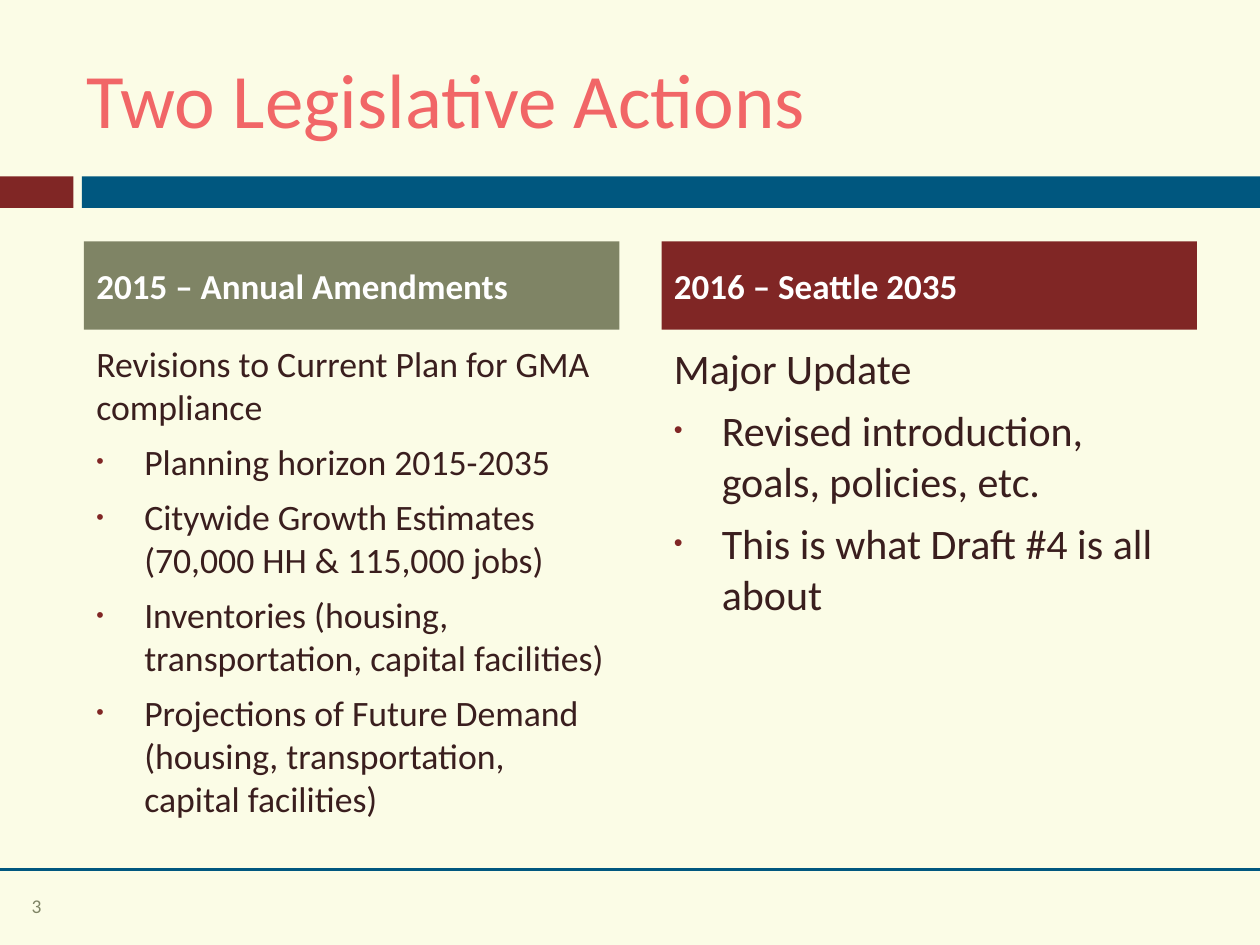
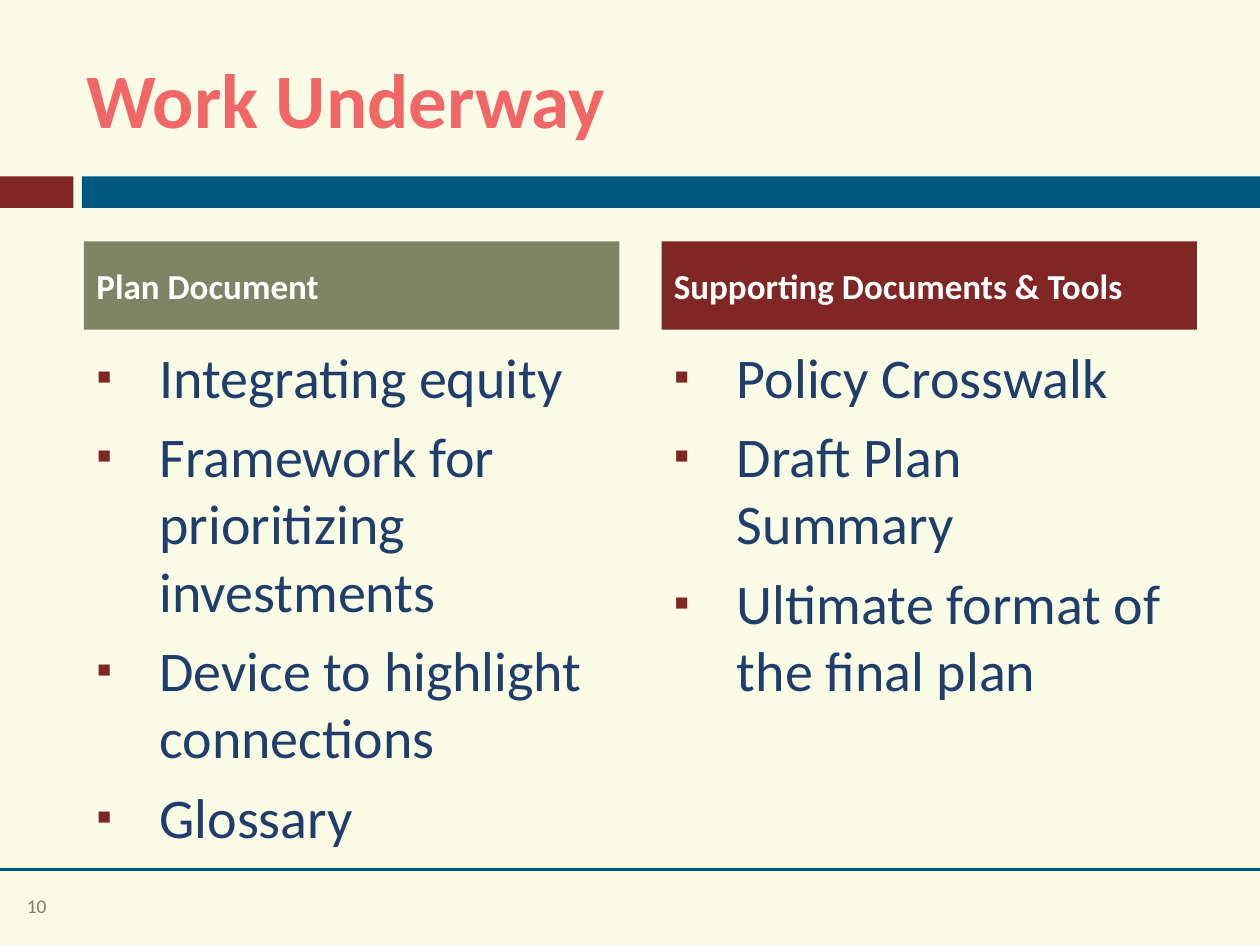
from lxml.etree import SubElement
from pptx import Presentation
from pptx.dml.color import RGBColor
from pptx.enum.shapes import MSO_CONNECTOR, MSO_SHAPE
from pptx.enum.text import MSO_ANCHOR, MSO_AUTO_SIZE, PP_ALIGN
from pptx.oxml.ns import qn
from pptx.util import Inches, Pt

# Shared style
CREAM = RGBColor(0xFB, 0xFC, 0xE6)
MAROON = RGBColor(0x80, 0x26, 0x25)
BLUE = RGBColor(0x00, 0x57, 0x7F)
OLIVE = RGBColor(0x7F, 0x84, 0x65)
CORAL = RGBColor(0xF1, 0x66, 0x67)
BROWN = RGBColor(0x3A, 0x1E, 0x1E)
NAVY = RGBColor(0x1F, 0x3E, 0x6C)
WHITE = RGBColor(0xFF, 0xFF, 0xFF)
FONT = "Calibri"

# Grid: twelve units to the inch
COLUMNS, ROWS = 120, 90
COLUMN_WIDTH = 51
COLUMN_LEFTS = (8, 63)
COLUMN_FILLS = (OLIVE, MAROON)

# Bullet styles: character, size in percent, hanging indent in inches
DOT = ("•", 60, 0.38)
SQUARE = ("▪", 80, 0.5)


class Deck:
    """Holds the style and the slide being built."""

    def __init__(self):
        self.prs = Presentation()
        self.prs.slide_width, self.prs.slide_height = Inches(10), Inches(7.5)
        background = self.prs.slide_master.background.fill
        background.solid()
        background.fore_color.rgb = CREAM
        self.slide = None

    def x(self, columns):
        return round(self.prs.slide_width * columns / COLUMNS)

    def y(self, rows):
        return round(self.prs.slide_height * rows / ROWS)

    def place(self, left, top, width, height):
        return self.x(left), self.y(top), self.x(width), self.y(height)

    def new_slide(self, title, number, bold=False):
        self.slide = self.prs.slides.add_slide(self.prs.slide_layouts[5])
        # Bands under the title, footer rule and slide number
        self.band(0, 16.8, 7, 3, MAROON)
        self.band(7.8, 16.8, COLUMNS - 7.8, 3, BLUE)
        self.rule(82.8)
        self.text(0, 84.7, 7, 3.2, [number], 11.1, OLIVE,
                  anchor=MSO_ANCHOR.MIDDLE, align=PP_ALIGN.CENTER)
        # Title
        heading = self.slide.shapes.title
        heading.left, heading.top, heading.width, heading.height = self.place(
            7, 3.6, 107, 11.4)
        self.fill_text(heading.text_frame, [title], 44, CORAL, bold,
                       anchor=MSO_ANCHOR.MIDDLE)

    def band(self, left, top, width, height, fill):
        band = self.slide.shapes.add_shape(
            MSO_SHAPE.RECTANGLE, *self.place(left, top, width, height))
        band.shadow.inherit = False
        band.fill.solid()
        band.fill.fore_color.rgb = fill
        band.line.fill.background()
        return band

    def rule(self, row):
        rule = self.slide.shapes.add_connector(
            MSO_CONNECTOR.STRAIGHT, 0, self.y(row), self.x(COLUMNS), self.y(row))
        rule.line.color.rgb = BLUE
        rule.line.width = Pt(1.5)
        SubElement(rule._element.spPr, qn("a:effectLst"))

    def text(self, left, top, width, height, lines, size, color, **style):
        box = self.slide.shapes.add_textbox(*self.place(left, top, width, height))
        self.fill_text(box.text_frame, lines, size, color, **style)

    def fill_text(self, frame, lines, size, color, bold=False, bullet=None,
                  lead=0, anchor=MSO_ANCHOR.TOP, align=PP_ALIGN.LEFT):
        """Fill a frame; the first `lead` lines carry no bullet."""
        frame.word_wrap = True
        frame.auto_size = MSO_AUTO_SIZE.NONE
        frame.vertical_anchor = anchor
        for index, line in enumerate(lines):
            paragraph = frame.add_paragraph() if index else frame.paragraphs[0]
            if bullet and index >= lead:
                self.bullet(paragraph, *bullet)
            paragraph.alignment = align
            paragraph.space_before = Pt(7 if index else 0)
            run = paragraph.add_run()
            run.text = line
            run.font.name = FONT
            run.font.size = Pt(size)
            run.font.bold = bold
            run.font.color.rgb = color

    def bullet(self, paragraph, character, percent, indent):
        properties = paragraph._p.get_or_add_pPr()
        properties.set("marL", str(Inches(indent)))
        properties.set("indent", str(-Inches(indent)))
        color = SubElement(properties, qn("a:buClr"))
        SubElement(color, qn("a:srgbClr"), val=str(MAROON))
        SubElement(properties, qn("a:buSzPct"), val=str(percent * 1000))
        SubElement(properties, qn("a:buFont"), typeface="Arial")
        SubElement(properties, qn("a:buChar"), char=character)

    def column(self, side, header, lines, size, color, bullet, lead=0):
        """A coloured header with its list below."""
        left = COLUMN_LEFTS[side]
        self.text(left, 32, COLUMN_WIDTH, 47, lines, size, color,
                  bullet=bullet, lead=lead)
        band = self.band(left, 23, COLUMN_WIDTH, 8.4, COLUMN_FILLS[side])
        self.fill_text(band.text_frame, [header], 20, WHITE, bold=True,
                       anchor=MSO_ANCHOR.MIDDLE)


def main():
    deck = Deck()

    # Two legislative actions
    deck.new_slide("Two Legislative Actions", "3")
    deck.column(0, "2015 – Annual Amendments", [
        "Revisions to Current Plan for GMA compliance",
        "Planning horizon 2015-2035",
        "Citywide Growth Estimates (70,000 HH & 115,000 jobs)",
        "Inventories (housing, transportation, capital facilities)",
        "Projections of Future Demand (housing, transportation, capital facilities)",
    ], 20.4, BROWN, DOT, lead=1)
    deck.column(1, "2016 – Seattle 2035", [
        "Major Update",
        "Revised introduction, goals, policies, etc.",
        "This is what Draft #4 is all about",
    ], 24, BROWN, DOT, lead=1)

    # Work underway
    deck.new_slide("Work Underway", "10", bold=True)
    deck.column(0, "Plan Document", [
        "Integrating equity",
        "Framework for prioritizing investments",
        "Device to highlight connections",
        "Glossary",
    ], 32, NAVY, SQUARE)
    deck.column(1, "Supporting Documents & Tools", [
        "Policy Crosswalk",
        "Draft Plan Summary",
        "Ultimate format of the final plan",
    ], 32, NAVY, SQUARE)

    deck.prs.save("out.pptx")


if __name__ == "__main__":
    main()
